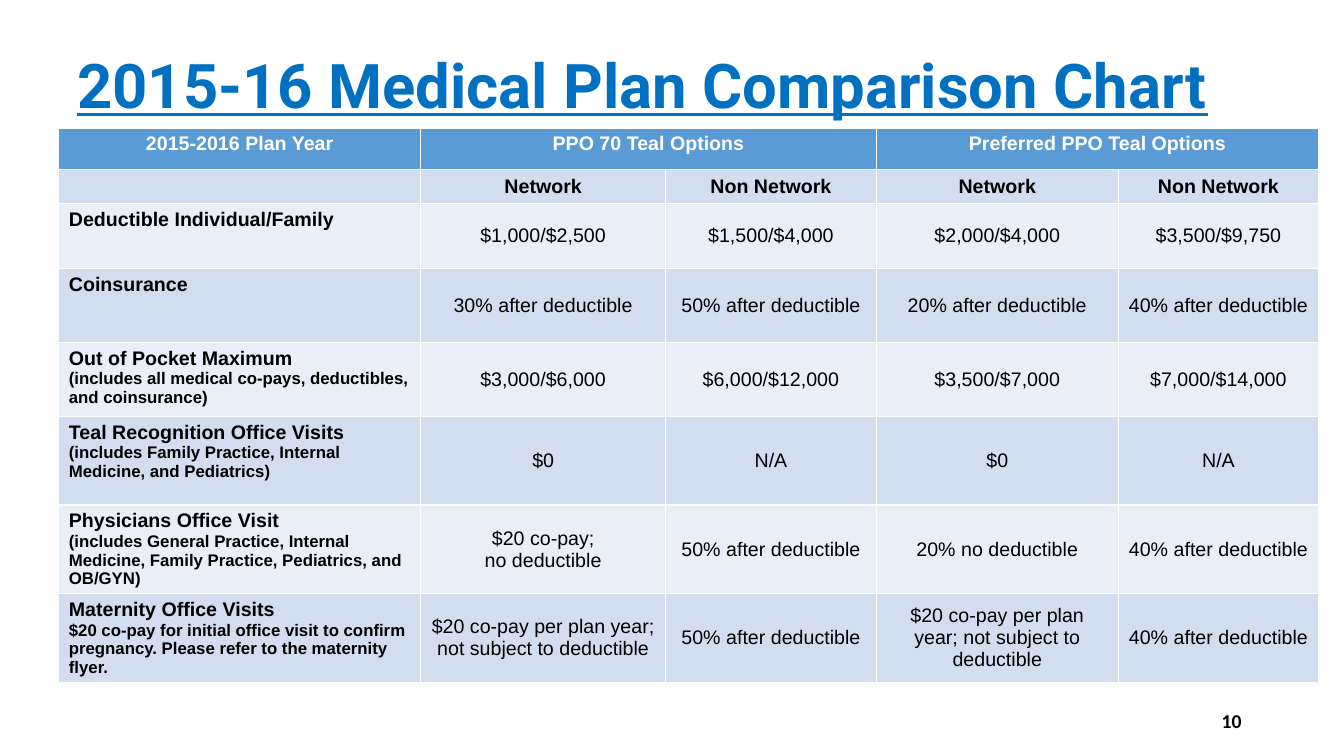
"""Build the medical plan comparison slide."""
from lxml import etree
from pptx import Presentation
from pptx.dml.color import RGBColor
from pptx.enum import text as t
from pptx.oxml.ns import qn
from pptx.util import Pt

BLUE = RGBColor(0x00, 0x70, 0xC0)
HEAD = RGBColor(0x5B, 0x9B, 0xD5)
DARK = RGBColor(0xD2, 0xDE, 0xEF)
PALE = RGBColor(0xEA, 0xEF, 0xF7)
WHITE = RGBColor(0xFF, 0xFF, 0xFF)
BLACK = RGBColor(0x00, 0x00, 0x00)

LEFT, MID, RIGHT = t.PP_ALIGN.LEFT, t.PP_ALIGN.CENTER, t.PP_ALIGN.RIGHT
CELL = {"name": "Arial", "size": Pt(14), "bold": False}
BOLD = {**CELL, "bold": True}
NOTE = {**BOLD, "size": Pt(12)}
TITLE = {"name": "Roboto", "size": Pt(44), "bold": True, "underline": True}
PAGE = {"name": "Calibri", "size": Pt(14), "bold": True}

COLS = [258.5, 175, 150.5, 172.8, 143.2]
ROWS = [29.5, 24, 46.5, 52.8, 52.8, 63.4, 63.4, 63.4]
DATA = [
    ["2015-2016 Plan Year", "PPO 70 Teal Options", "", "Preferred PPO Teal Options", ""],
    ["", "Network", "Non Network", "Network", "Non Network"],
    ["Deductible Individual/Family",
     "$1,000/$2,500", "$1,500/$4,000", "$2,000/$4,000", "$3,500/$9,750"],
    ["Coinsurance", "30% after deductible", "50% after deductible",
     "20% after deductible", "40% after deductible"],
    ["Out of Pocket Maximum\n(includes all medical co-pays, deductibles, and coinsurance)",
     "$3,000/$6,000", "$6,000/$12,000", "$3,500/$7,000", "$7,000/$14,000"],
    ["Teal Recognition Office Visits\n"
     "(includes Family Practice, Internal Medicine, and Pediatrics)",
     "$0", "N/A", "$0", "N/A"],
    ["Physicians Office Visit\n(includes General Practice, Internal Medicine, "
     "Family Practice, Pediatrics, and OB/GYN)",
     "$20 co-pay;\nno deductible", "50% after deductible",
     "20% no deductible", "40% after deductible"],
    ["Maternity Office Visits\n$20 co-pay for initial office visit to confirm pregnancy. "
     "Please refer to the maternity flyer.",
     "$20 co-pay per plan year; not subject to deductible", "50% after deductible",
     "$20 co-pay per plan year; not subject to deductible", "40% after deductible"],
]


def write(frame, words, looks, color, align):
    """Write one paragraph per line, the last look serving all further lines."""
    for i, line in enumerate(words.split("\n")):
        para = frame.paragraphs[0] if i == 0 else frame.add_paragraph()
        para.alignment = align
        if not line:
            etree.SubElement(para._p, qn("a:endParaRPr"), sz="1400")
            continue
        run = para.add_run()
        run.text = line
        for key, val in looks[min(i, len(looks) - 1)].items():
            setattr(run.font, key, val)
        run.font.color.rgb = color


def add_title(slide, words):
    """Place and fill the title."""
    box = slide.shapes.title
    box.left, box.top, box.width, box.height = Pt(48), Pt(11), Pt(862), Pt(104)
    frame = box.text_frame
    frame.word_wrap = True
    frame.vertical_anchor = t.MSO_ANCHOR.MIDDLE
    write(frame, words, [TITLE], BLUE, LEFT)
    frame.paragraphs[0].line_spacing = 0.9


def fill_cell(cell, words, row, col):
    """Fill and style a cell by its row and column."""
    cell.fill.solid()
    cell.fill.fore_color.rgb = HEAD if row == 0 else DARK if row % 2 else PALE
    if row and col:
        cell.vertical_anchor = t.MSO_ANCHOR.MIDDLE
    looks = [BOLD, NOTE] if col == 0 else [BOLD] if row < 2 else [CELL]
    align = LEFT if row and col == 0 else MID
    write(cell.text_frame, words, looks, BLACK if row else WHITE, align)


def add_plans(slide):
    """Add the plan table."""
    grid = slide.shapes.add_table(len(ROWS), len(COLS), Pt(42), Pt(91.5),
                                  Pt(sum(COLS)), Pt(sum(ROWS))).table
    for col, wide in zip(grid.columns, COLS):
        col.width = Pt(wide)
    for row, high in zip(grid.rows, ROWS):
        row.height = Pt(high)
    for r, line in enumerate(DATA):
        for c, words in enumerate(line):
            fill_cell(grid.cell(r, c), words, r, c)
    for c in (1, 3):
        grid.cell(0, c).merge(grid.cell(0, c + 1))


def add_page(slide, words):
    """Add the page number."""
    frame = slide.shapes.add_textbox(Pt(678), Pt(500.5), Pt(216), Pt(28.8)).text_frame
    frame.word_wrap = True
    frame.vertical_anchor = t.MSO_ANCHOR.MIDDLE
    write(frame, words, [PAGE], BLACK, RIGHT)


def main():
    """Build and save the slide."""
    deck = Presentation()
    deck.slide_width, deck.slide_height = Pt(960), Pt(540)
    slide = deck.slides.add_slide(deck.slide_layouts[5])
    add_title(slide, "2015-16 Medical Plan Comparison Chart")
    add_plans(slide)
    add_page(slide, "10")
    deck.save("out.pptx")


if __name__ == "__main__":
    main()
